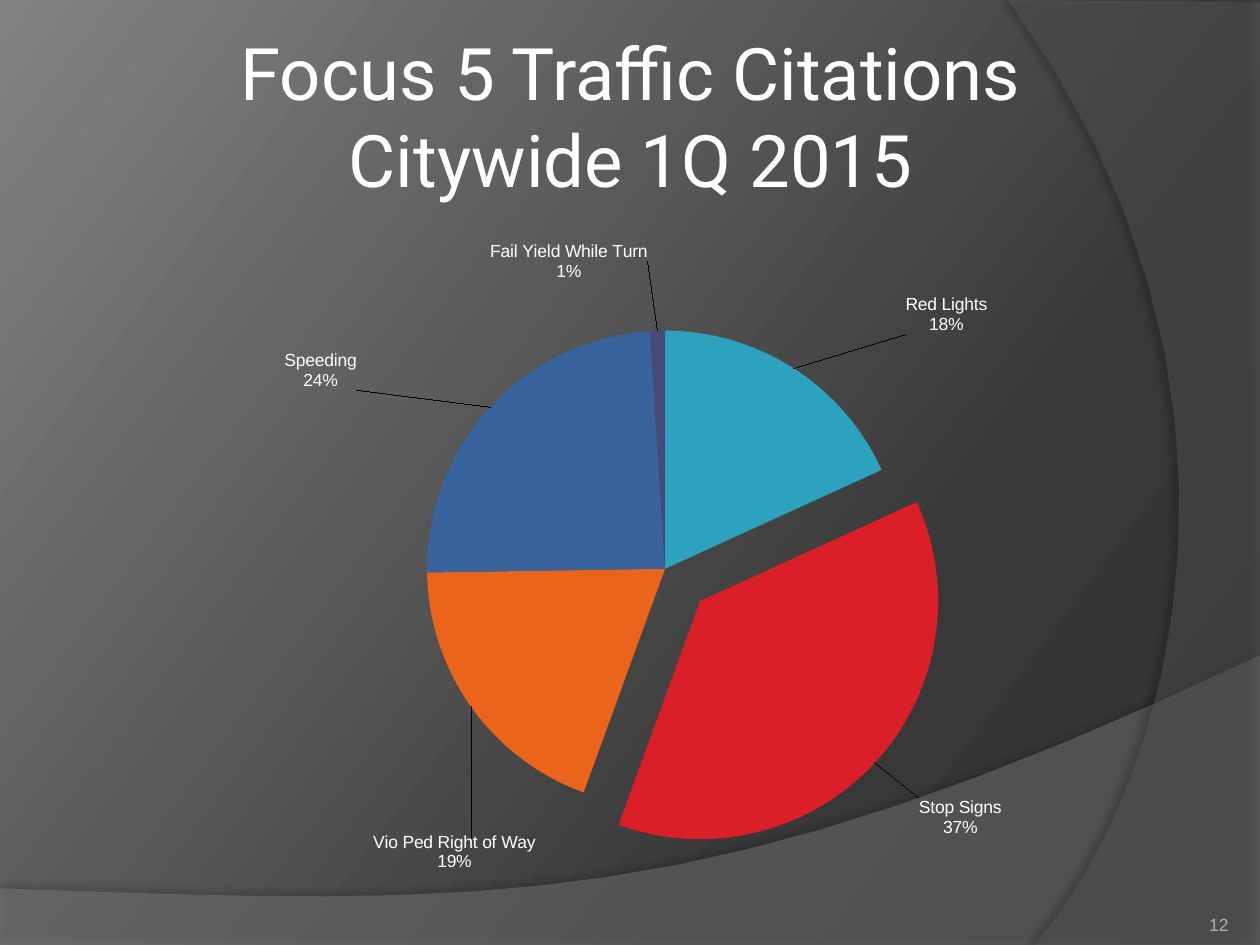
from lxml import etree
from pptx import Presentation
from pptx.chart.data import CategoryChartData
from pptx.dml.color import RGBColor
from pptx.enum.chart import XL_CHART_TYPE
from pptx.enum.text import MSO_ANCHOR, PP_ALIGN
from pptx.oxml import parse_xml
from pptx.oxml.ns import nsdecls, qn
from pptx.util import Inches, Pt

PIE = XL_CHART_TYPE.PIE
MIDDLE, BOTTOM = MSO_ANCHOR.MIDDLE, MSO_ANCHOR.BOTTOM
CENTER, RIGHT = PP_ALIGN.CENTER, PP_ALIGN.RIGHT

COLORS = {
    "dark": "2F2F2F", "mid": "383838", "light": "828282",
    "wave": "7F7F7F", "arc": "5E5E5E", "shade": "000000",
    "text": "FFFFFF", "number": "A4B5B9",
    "red": "2DA2BF", "stop": "DA1F28", "ped": "EB641B",
    "speed": "39639D", "turn": "474B78",
}
# Category, value, colour, label shift in percent of the chart
SLICES = [
    ("Red Lights", 18, "red", 9.5, -4.4),
    ("Stop Signs", 37, "stop", 3.4, 4.8),
    ("Vio Ped Right of Way", 19, "ped", 6.2, 20),
    ("Speeding", 24, "speed", -11.3, -1.9),
    ("Fail Yield While Turn", 1, "turn", -7.8, -9.8),
]


def rgb(name):
    return RGBColor.from_string(COLORS[name])


def add_back(slide):
    fill = slide.background.fill
    fill.gradient()
    fill.gradient_angle = 360 - 217
    stops = next(slide.element.iter(qn("a:gsLst")))
    for stop in list(stops):
        stops.remove(stop)
    for pos, name in ((0, "dark"), (30, "mid"), (100, "light")):
        stop = etree.SubElement(stops, qn("a:gs"), pos=str(pos * 1000))
        etree.SubElement(stop, qn("a:srgbClr"), val=COLORS[name])


def curve(a, b, c, d, steps=16):
    """Points along a cubic curve from a to d."""
    pts = []
    for i in range(steps + 1):
        t = i / steps
        u = 1 - t
        pts.append(tuple(u**3 * p + 3 * u * u * t * q + 3 * u * t * t * r + t**3 * s
                         for p, q, r, s in zip(a, b, c, d)))
    return pts


def add_sheet(slide, box, pts, name, alpha, shade):
    """Translucent sheet with a soft shadow; points are relative to the box."""
    left, top = box[:2]
    spots = [(Inches(left + x), Inches(top + y)) for x, y in pts]
    form = slide.shapes.build_freeform(*spots[0])
    form.add_line_segments(spots[1:], close=True)
    shape = form.convert_to_shape()
    shape.fill.solid()
    shape.fill.fore_color.rgb = rgb(name)
    shape.line.fill.background()
    shape.shadow.inherit = False
    props = shape.element.spPr
    color = props.find(qn("a:solidFill"))[0]
    etree.SubElement(color, qn("a:alpha"), val=str(alpha * 1000))
    depth, blur, dist, angle = shade
    cast = etree.SubElement(
        props.find(qn("a:effectLst")), qn("a:outerShdw"), blurRad=str(Pt(blur)),
        dist=str(Pt(dist)), dir=str(angle * 60000), algn="ctr", rotWithShape="0")
    tone = etree.SubElement(cast, qn("a:srgbClr"), val=COLORS["shade"])
    etree.SubElement(tone, qn("a:alpha"), val=str(depth * 1000))


def add_waves(slide, box):
    left, top, wide, high = box
    rise = 5.2
    wave = curve((wide, 0), (5.59, 2.09), (3.91, 1.99), (0, 1.85))
    add_sheet(slide, (left, top + rise), wave + [(0, 2.31), (wide, 2.31)],
              "wave", 45, (35, 4, 3.5, 270))
    arc = curve((0.21, high), (1.35, 6.19), (2.18, 3), (0, 0))
    add_sheet(slide, (left + 8, top), arc + [(2, 0.02), (2, high)],
              "arc", 40, (45, 4, 4, 180))


def add_text(slide, box, text, size, face, color, align, anchor, inset=0):
    frame = slide.shapes.add_textbox(*map(Inches, box)).text_frame
    frame.word_wrap = True
    frame.vertical_anchor = anchor
    frame.margin_left = frame.margin_right = Inches(inset)
    frame.margin_top = frame.margin_bottom = Inches(inset)
    para = frame.paragraphs[0]
    para.text = text
    para.alignment = align
    para.font.size = Pt(size)
    para.font.name = face
    para.font.color.rgb = rgb(color)


def label_xml():
    flags = ('<c:dLblPos val="outEnd"/><c:showLegendKey val="0"/><c:showVal val="0"/>'
             '<c:showCatName val="1"/><c:showSerName val="0"/><c:showPercent val="1"/>'
             '<c:showBubbleSize val="0"/><c:separator>\n</c:separator>')
    form = '<c:numFmt formatCode="0%" sourceLinked="0"/>'
    parts = "".join(
        f'<c:dLbl><c:idx val="{i}"/><c:layout><c:manualLayout><c:x val="{dx / 100}"/>'
        f'<c:y val="{dy / 100}"/></c:manualLayout></c:layout>{form}{flags}</c:dLbl>'
        for i, (*_, dx, dy) in enumerate(SLICES))
    return (f'<c:dLbls {nsdecls("c")}>{parts}{form}{flags}'
            '<c:showLeaderLines val="1"/></c:dLbls>')


def add_pie(slide, box):
    data = CategoryChartData(number_format="#,##0")
    data.categories = [row[0] for row in SLICES]
    data.add_series("Series 1", [row[1] for row in SLICES])
    chart = slide.shapes.add_chart(PIE, *map(Inches, box), data).chart
    chart.has_legend = False
    chart.has_title = False
    chart.font.size = Pt(10)
    chart.font.name = "Arial"
    chart.font.color.rgb = rgb("text")
    plot = chart.plots[0]
    plot.vary_by_categories = True
    series = plot.series[0]
    for i, row in enumerate(SLICES):
        look = series.points[i].format
        look.fill.solid()
        look.fill.fore_color.rgb = rgb(row[2])
        look.line.fill.background()

    # Pull out the second slice
    slice_xml = series._element.findall(qn("c:dPt"))[1]
    burst = etree.Element(qn("c:explosion"), val="20")
    slice_xml.find(qn("c:spPr")).addprevious(burst)
    # Labels with leader lines
    series._element.find(qn("c:cat")).addprevious(parse_xml(label_xml()))
    # Plot area
    area = next(chart.element.iter(qn("c:plotArea")))
    for old in area.findall(qn("c:layout")):
        area.remove(old)
    area.insert(0, parse_xml(
        f'<c:layout {nsdecls("c")}><c:manualLayout><c:layoutTarget val="inner"/>'
        '<c:xMode val="edge"/><c:yMode val="edge"/><c:x val="0.321"/><c:y val="0.141"/>'
        '<c:w val="0.42"/><c:h val="0.756"/></c:manualLayout></c:layout>'))


def main():
    deck = Presentation()
    deck.slide_width, deck.slide_height = Inches(10), Inches(7.5)
    slide = deck.slides.add_slide(deck.slide_layouts[6])
    add_back(slide)
    add_waves(slide, (0, 0, 10, 7.5))
    add_text(slide, (0.42, 0.25, 9.17, 1.33),
             "Focus 5 Traffic Citations\vCitywide 1Q 2015",
             41.4, "Roboto", "text", CENTER, MIDDLE, 0.05)
    add_pie(slide, (0.5, 1.92, 9, 5))
    add_text(slide, (8.92, 7.02, 0.83, 0.4), "12", 10, "Arial", "number", RIGHT, BOTTOM)
    deck.save("out.pptx")


if __name__ == "__main__":
    main()
